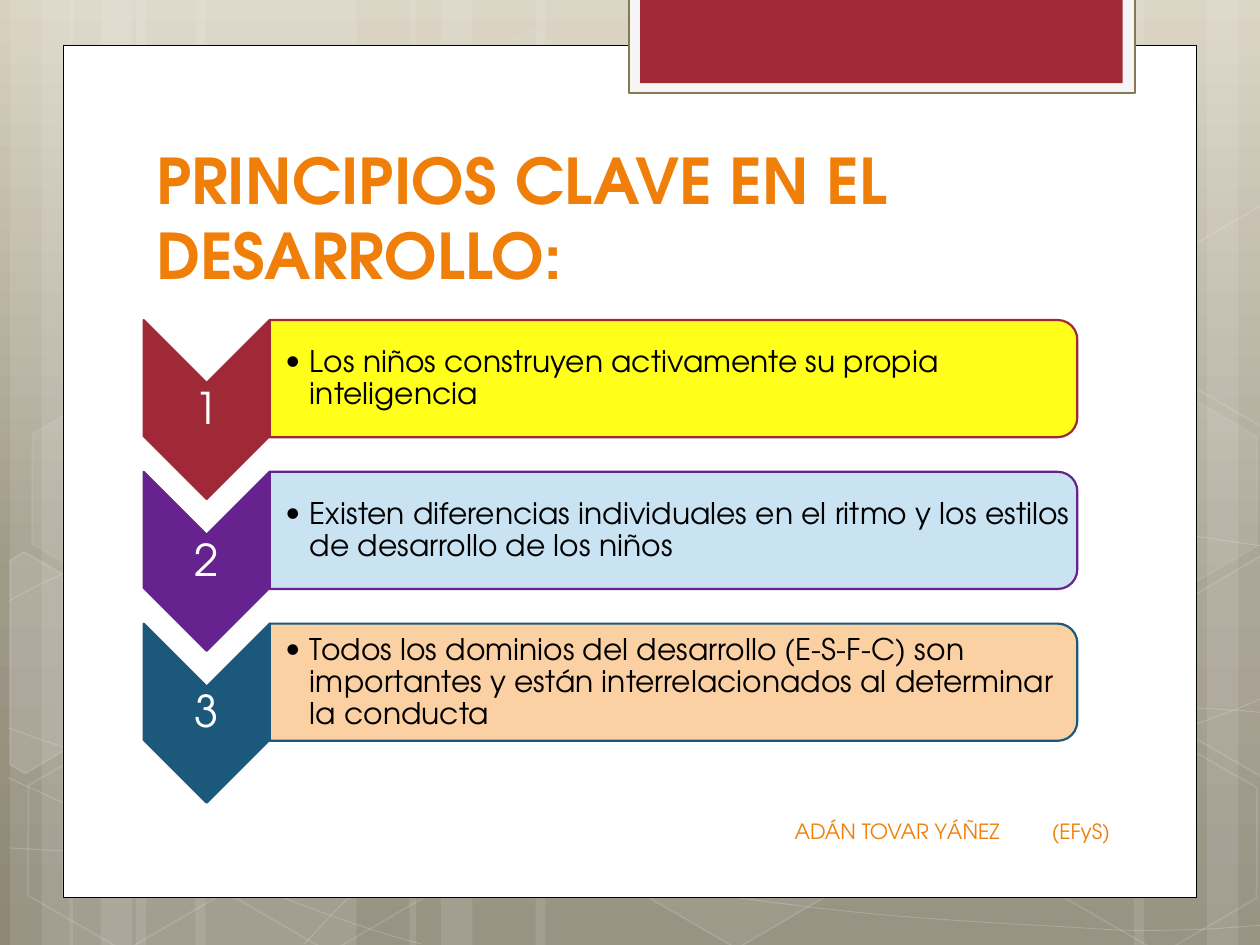
from copy import deepcopy
from dataclasses import dataclass

from lxml.etree import SubElement
from pptx import Presentation
from pptx.dml.color import RGBColor
from pptx.enum.shapes import MSO_SHAPE as Shape
from pptx.enum.text import MSO_ANCHOR as Anchor, PP_ALIGN as Align
from pptx.oxml.ns import qn
from pptx.util import Inches, Pt


@dataclass(frozen=True)
class Theme:
    font: str = "TeX Gyre Adventor"
    orange: str = "F07F09"
    red: str = "9F2936"
    purple: str = "66228E"
    blue: str = "1B587C"
    yellow: str = "FFFF00"
    sky: str = "C4E1F2"
    peach: str = "FBCC9A"
    white: str = "FFFFFF"
    black: str = "000000"
    tab: str = "F5F5F5"
    tab_edge: str = "887952"
    backdrop: tuple = ((0, "D8D1C0"), (0.62, "9F9988"), (1, "8E8776"))
    title_size: int = 36
    number_size: int = 25
    body_size: int = 17
    footer_size: int = 12


THEME = Theme()

PRINCIPLES = [
    ("Los niños construyen activamente su propia inteligencia", THEME.red, THEME.yellow),
    ("Existen diferencias individuales en el ritmo y los estilos de desarrollo de los niños",
     THEME.purple, THEME.sky),
    ("Todos los dominios del desarrollo (E-S-F-C) son importantes y están "
     "interrelacionados al determinar la conducta", THEME.blue, THEME.peach),
]
ROW_PITCH = 1.205

STRIPES = [  # left, width
    (1.08, 1.75), (0.08, 0.5), (0.33, 0.83), (1.55, 1.75), (0.55, 0.5), (0.8, 0.83),
    (7.33, 1.75), (9.58, 0.5), (9, 0.83), (4.25, 3.08), (3.25, 0.5), (3.5, 0.83),
]
HEXAGONS = [  # left, top, fill opacity, line opacity
    (3.34, 0.36, 4, 8), (4.97, 5.89, 6, 12), (0.11, 5.91, 0, 12), (0.14, 3.12, 7, 8),
    (1.74, 5.92, 0, 12), (8.34, 5.93, 0, 12), (8.34, 3.14, 7, 8),
]
CUT_HEXAGONS = [  # fill opacity, corners
    (10, [(0.08, 4.45), (0.19, 4.38), (0.96, 4.82), (0.95, 5.7), (0.2, 6.14), (0.08, 6.07)]),
    (4, [(9.26, 4.85), (10.01, 4.41), (10.09, 4.46), (10.09, 6.13), (10.02, 6.17), (9.26, 5.73)]),
    (0, [(9.26, 2.07), (10.01, 1.63), (10.1, 1.68), (10.09, 3.35), (10.02, 3.39), (9.26, 2.95)]),
]
CURVES = [  # start point, then two control points and an end point for each arc
    [(0.07, 6.73), (0.61, 6.76), (1.15, 6.79), (1.9, 6.78), (2.65, 6.77), (3.58, 6.75),
     (4.58, 6.65), (5.58, 6.55), (7, 6.36), (7.92, 6.17), (8.83, 5.98), (9.77, 5.68),
     (10.07, 5.51)],
    [(0.07, 4.77), (0.36, 4.61), (0.65, 4.46), (1.21, 4.31), (1.78, 4.16), (2.59, 3.94),
     (3.47, 3.87), (4.36, 3.8), (5.44, 3.79), (6.54, 3.87), (7.64, 3.95), (9.47, 4.26),
     (10.07, 4.34)],
    [(0.06, 6.17), (1.27, 6.72), (2.47, 7.27), (3.34, 7.49)],
    [(0.07, 5.78), (0.38, 5.89), (0.7, 6), (1.28, 6.16), (1.86, 6.31), (2.73, 6.56),
     (3.57, 6.73), (4.4, 6.9), (5.45, 7.08), (6.28, 7.18), (7.11, 7.29), (8, 7.33),
     (8.53, 7.36), (9.05, 7.4), (9.19, 7.38), (9.45, 7.38), (9.71, 7.37), (9.89, 7.35),
     (10.07, 7.34)],
    [(2.42, 7.49), (2.6, 7.29), (2.78, 7.09), (3.02, 6.91), (3.26, 6.73), (3.6, 6.53),
     (3.88, 6.39), (4.16, 6.25), (4.33, 6.19), (4.7, 6.09), (5.06, 5.99), (5.73, 5.85),
     (6.08, 5.78), (6.44, 5.71), (6.49, 5.71), (6.8, 5.69), (7.11, 5.66), (7.6, 5.63),
     (7.94, 5.62), (8.29, 5.61), (8.86, 5.62), (8.86, 5.62), (9.08, 5.62), (9.3, 5.62),
     (9.53, 5.62), (9.71, 5.63), (9.88, 5.64), (10.06, 5.66)],
]


def paint(fill, color):
    fill.solid()
    fill.fore_color.rgb = RGBColor.from_string(color)


def set_opacity(color_parent, percent):
    if percent < 100:
        color = color_parent.find(qn("a:solidFill")).find(qn("a:srgbClr"))
        SubElement(color, qn("a:alpha"), val=str(percent * 1000))


def style(shape, fill=None, opacity=100, line=None, width=1, line_opacity=100):
    """Set fill and line; a missing colour or zero opacity means none."""
    shape.shadow.inherit = False
    properties = shape.element.spPr
    if fill and opacity:
        paint(shape.fill, fill)
        set_opacity(properties, opacity)
    else:
        shape.fill.background()
    if line:
        shape.line.width = Pt(width)
        paint(shape.line.fill, line)
        set_opacity(properties.find(qn("a:ln")), line_opacity)
    else:
        shape.line.fill.background()


def add_preset(slide, kind, box, rotation=0, **look):
    shape = slide.shapes.add_shape(kind, *map(Inches, box))
    shape.rotation = rotation
    style(shape, **look)
    return shape


def add_outline(slide, points, close, **look):
    corners = [(Inches(x), Inches(y)) for x, y in points]
    builder = slide.shapes.build_freeform(*corners[0])
    builder.add_line_segments(corners[1:], close=close)
    shape = builder.convert_to_shape()
    style(shape, **look)
    return shape


def bend(shape):
    """Turn each three line segments of an outline into one Bézier arc."""
    outline = shape.element.xpath(".//a:path")[0]
    segments = outline.findall(qn("a:lnTo"))
    for start in range(0, len(segments), 3):
        arc = SubElement(outline, qn("a:cubicBezTo"))
        for segment in segments[start:start + 3]:
            arc.append(segment[0])
            outline.remove(segment)


def add_text(slide, text, box, size, color, bold=False, align=Align.LEFT,
             anchor=Anchor.MIDDLE, insets=(0.1, 0.05, 0.1, 0.05), spacing=None):
    frame = slide.shapes.add_textbox(*map(Inches, box)).text_frame
    left, top, right, bottom = map(Inches, insets)
    frame_format = {"word_wrap": True, "vertical_anchor": anchor, "margin_left": left,
                    "margin_top": top, "margin_right": right, "margin_bottom": bottom}
    for name, value in frame_format.items():
        setattr(frame, name, value)
    paragraph = frame.paragraphs[0]
    paragraph.alignment, paragraph.line_spacing = align, spacing
    run = paragraph.add_run()
    run.text = text
    for name, value in {"name": THEME.font, "size": Pt(size), "bold": bold}.items():
        setattr(run.font, name, value)
    run.font.color.rgb = RGBColor.from_string(color)
    return paragraph


def add_bullet(paragraph, indent):
    properties = paragraph._p.get_or_add_pPr()
    properties.set("marL", str(Inches(indent)))
    properties.set("indent", str(-Inches(indent)))
    SubElement(properties, qn("a:buFont"), typeface=THEME.font)
    SubElement(properties, qn("a:buChar"), char="•")


def add_tab_stop(paragraph, position):
    stops = SubElement(paragraph._p.get_or_add_pPr(), qn("a:tabLst"))
    SubElement(stops, qn("a:tab"), pos=str(Inches(position)), algn="l")


def paint_background(slide):
    fill = slide.background.fill
    fill.gradient()
    fill.gradient_angle = 270
    stops = slide.element.xpath(".//a:gsLst")[0]
    stops.append(deepcopy(stops[-1]))
    for stop, (position, color) in zip(fill.gradient_stops, THEME.backdrop):
        stop.position = position
        stop.color.rgb = RGBColor.from_string(color)


def add_backdrop(slide):
    white = THEME.white
    for left, width in STRIPES:
        add_preset(slide, Shape.RECTANGLE, (left, 0, width, 7.5), fill=white, opacity=10)
    for knots in CURVES:
        bend(add_outline(slide, knots, False, line=white, width=0.5, line_opacity=20))
    for left, top, opacity, line_opacity in HEXAGONS:
        hexagon = add_preset(slide, Shape.HEXAGON, (left, top, 1.75, 1.52), 30, fill=white,
                             opacity=opacity, line=white, line_opacity=line_opacity)
        hexagon.adjustments[0] = 0.285
    for opacity, corners in CUT_HEXAGONS:
        add_outline(slide, corners, True, fill=white, opacity=opacity, line=white,
                    line_opacity=12)


def add_panel(slide):
    add_preset(slide, Shape.RECTANGLE, (0.5, 0.36, 9, 6.76), fill=THEME.white,
               line=THEME.black, width=0.5)
    add_preset(slide, Shape.RECTANGLE, (4.99, -0.02, 4.02, 0.76), fill=THEME.tab,
               line=THEME.tab_edge, width=1.25)
    add_preset(slide, Shape.RECTANGLE, (5.08, -0.02, 3.83, 0.68), fill=THEME.red)


def add_principle(slide, index, text, color, tint):
    offset = index * ROW_PITCH
    add_preset(slide, Shape.CHEVRON, (0.93, 2.75 + offset, 1.42, 1), 90, fill=color,
               line=color, width=1.25)
    add_text(slide, str(index + 1), (1.14, 3.04 + offset, 1, 0.43), THEME.number_size,
             THEME.white, align=Align.CENTER, insets=(0.02,) * 4, spacing=0.9)
    add_preset(slide, Shape.ROUND_2_SAME_RECTANGLE, (4.88, -0.2 + offset, 0.93, 6.41), 90,
               fill=tint, opacity=90, line=color, width=1.25)
    body = add_text(slide, text, (2.14, 2.59 + offset, 6.37, 0.84), THEME.body_size,
                    THEME.black, insets=(0.13, 0.01, 0.01, 0.01), spacing=0.9)
    add_bullet(body, 0.19)


def main():
    presentation = Presentation()
    presentation.slide_width, presentation.slide_height = Inches(10), Inches(7.5)
    slide = presentation.slides.add_slide(presentation.slide_layouts[6])
    paint_background(slide)
    add_backdrop(slide)
    add_panel(slide)
    add_text(slide, "PRINCIPIOS CLAVE EN EL DESARROLLO:", (1.14, 1.12, 7.68, 1.25),
             THEME.title_size, THEME.orange, bold=True, anchor=Anchor.BOTTOM)
    for index, principle in enumerate(PRINCIPLES):
        add_principle(slide, index, *principle)
    footer = add_text(slide, "ADÁN TOVAR YÁÑEZ\t(EFyS)", (5.08, 6.4, 3.83, 0.4),
                      THEME.footer_size, THEME.orange, align=Align.RIGHT)
    add_tab_stop(footer, 2.04)
    presentation.save("out.pptx")


if __name__ == "__main__":
    main()
